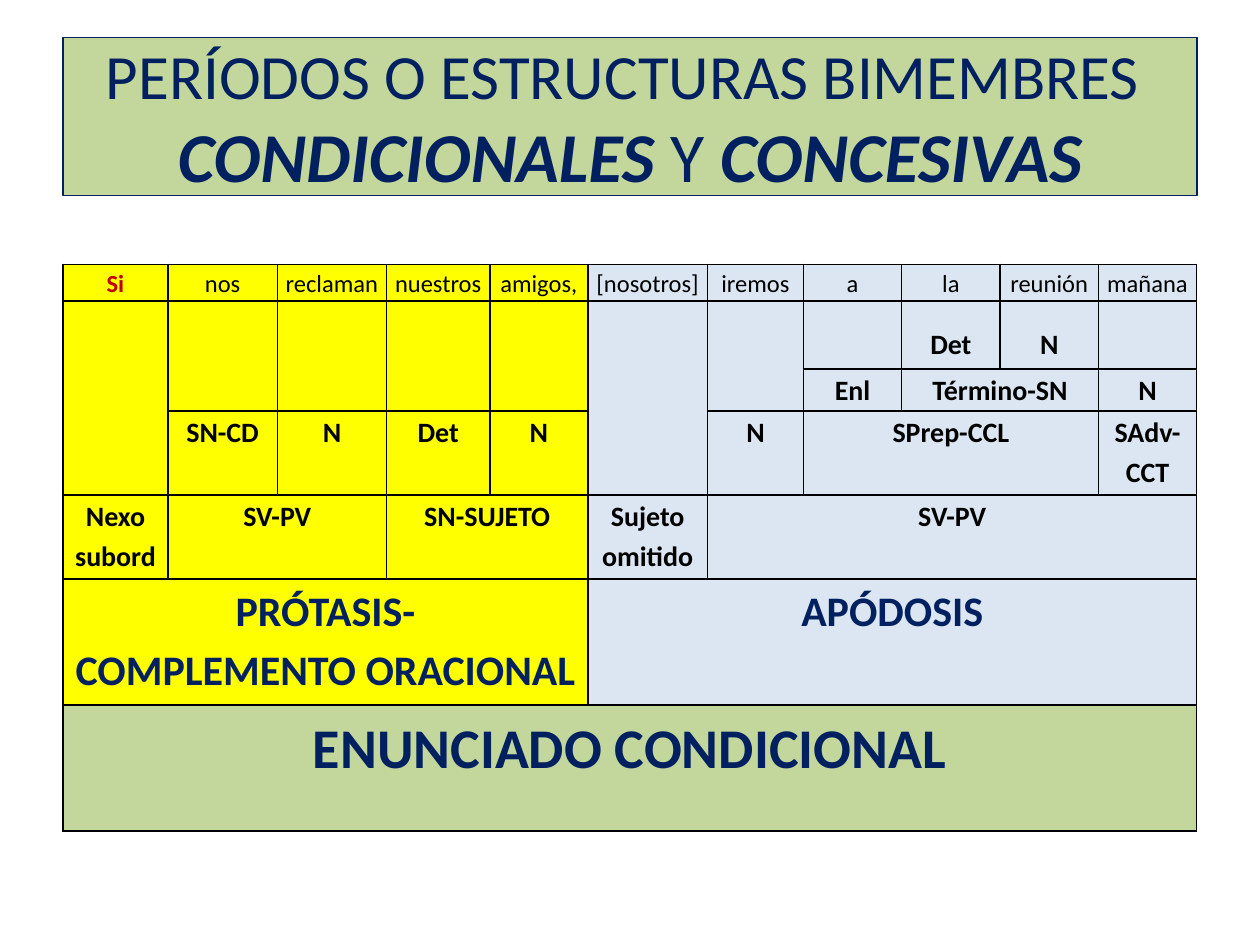
from typing import NamedTuple

from lxml import etree
from pptx import Presentation
from pptx import util as u
from pptx.dml.color import RGBColor
from pptx.enum import shapes, text
from pptx.oxml import ns

COLORS = {
    "yellow": "FFFF00",
    "blue": "DCE6F2",
    "green": "C3D69B",
    "navy": "002060",
    "red": "C00000",
    "black": "000000",
}
FONT = "Calibri"
LEFT, WIDTH = 36, 648
SIDE_MARGIN = 4.5
COLUMN_WIDTHS = [60, 62.5, 62.5, 59, 56, 68.4, 54.8] + [56.2] * 4
ROW_HEIGHTS = [21, 39, 24, 48, 48, 72, 72]
FIRST_APODOSIS_COLUMN = 5
WORDS = ["Si", "nos", "reclaman", "nuestros", "amigos,", "[nosotros]",
         "iremos", "a", "la", "reunión", "mañana"]


class Block(NamedTuple):
    """One analysis cell, possibly spanning several rows or columns."""
    row: int
    column: int
    label: str = ""
    rows: int = 1
    columns: int = 1
    size: int = 16
    bold: bool = True
    color: str = "black"
    fill: str = ""
    top: float = 0


class TitleRun(NamedTuple):
    words: str
    size: int
    strong: bool


BLOCKS = [
    # Sentence, one word per column
    *(Block(0, column, word, size=14, bold=column == 0,
            color="black" if column else "red")
      for column, word in enumerate(WORDS)),
    # Empty cells below the words
    *(Block(1, column, rows=3 if column in (0, 5) else 2) for column in range(7)),
    Block(1, 7),
    Block(1, 8, "Det", top=12.4),
    Block(1, 9, "N", top=12.4),
    Block(1, 10),
    # Constituents
    Block(2, 7, "Enl"),
    Block(2, 8, "Término-SN", columns=2),
    Block(2, 10, "N"),
    Block(3, 1, "SN-CD"),
    Block(3, 2, "N"),
    Block(3, 3, "Det"),
    Block(3, 4, "N"),
    Block(3, 6, "N"),
    Block(3, 7, "SPrep-CCL", columns=3),
    Block(3, 10, "SAdv-CCT"),
    # Functions
    Block(4, 0, "Nexo subord"),
    Block(4, 1, "SV-PV", columns=2),
    Block(4, 3, "SN-SUJETO", columns=2),
    Block(4, 5, "Sujeto omitido"),
    Block(4, 6, "SV-PV", columns=5),
    # Two members and the whole statement
    Block(5, 0, "PRÓTASIS-\nCOMPLEMENTO ORACIONAL", columns=5, size=24, color="navy"),
    Block(5, 5, "APÓDOSIS", columns=6, size=24, color="navy"),
    Block(6, 0, "ENUNCIADO CONDICIONAL", columns=11, size=32, color="navy",
          fill="green"),
]
TITLE = [
    [TitleRun("PERÍODOS O ESTRUCTURAS BIMEMBRES ", 36, False)],
    [TitleRun("CONDICIONALES", 40, True), TitleRun(" Y ", 40, False),
     TitleRun("CONCESIVAS", 40, True)],
]


def rgb(name: str) -> RGBColor:
    return RGBColor.from_string(COLORS[name])


def add_borders(cell, color: str = "black", width: float = 1) -> None:
    properties = cell._tc.get_or_add_tcPr()
    for side in "LRTB":
        line = etree.SubElement(properties, ns.qn(f"a:ln{side}"), w=str(u.Pt(width)))
        fill = etree.SubElement(line, ns.qn("a:solidFill"))
        etree.SubElement(fill, ns.qn("a:srgbClr"), val=COLORS[color])


def draw_title(slide) -> None:
    shape = slide.shapes.add_shape(shapes.MSO_SHAPE.RECTANGLE, u.Pt(LEFT), u.Pt(21.6),
                                   u.Pt(WIDTH), u.Pt(90))
    shape.shadow.inherit = False
    shape.fill.solid()
    shape.fill.fore_color.rgb = rgb("green")
    shape.line.color.rgb = rgb("navy")
    shape.line.width = u.Pt(0.75)
    frame = shape.text_frame
    frame.word_wrap = True
    frame.vertical_anchor = text.MSO_ANCHOR.MIDDLE
    paragraph = frame.paragraphs[0]
    paragraph.alignment = text.PP_ALIGN.CENTER
    for index, line in enumerate(TITLE):
        if index:
            paragraph.add_line_break()
        for part in line:
            run = paragraph.add_run()
            run.text = part.words
            run.font.name = FONT
            run.font.size = u.Pt(part.size)
            run.font.bold = run.font.italic = part.strong
            run.font.color.rgb = rgb("navy")


def draw_block(table, block: Block) -> None:
    side = "yellow" if block.column < FIRST_APODOSIS_COLUMN else "blue"
    for row in range(block.row, block.row + block.rows):
        for column in range(block.column, block.column + block.columns):
            covered = table.cell(row, column)
            covered.margin_left = covered.margin_right = u.Pt(SIDE_MARGIN)
            covered.margin_top, covered.margin_bottom = u.Pt(block.top), 0
            add_borders(covered)
            covered.fill.solid()
            covered.fill.fore_color.rgb = rgb(block.fill or side)

    cell = table.cell(block.row, block.column)
    if block.rows * block.columns > 1:
        cell.merge(table.cell(block.row + block.rows - 1,
                              block.column + block.columns - 1))
    if not block.label:
        return
    cell.text_frame.text = block.label
    for paragraph in cell.text_frame.paragraphs:
        paragraph.alignment = text.PP_ALIGN.CENTER
        paragraph.line_spacing = 1.15
        paragraph.font.name = FONT
        paragraph.font.size = u.Pt(block.size)
        paragraph.font.bold = block.bold
        paragraph.font.color.rgb = rgb(block.color)


def draw_analysis(slide) -> None:
    table = slide.shapes.add_table(
        len(ROW_HEIGHTS), len(COLUMN_WIDTHS), u.Pt(LEFT), u.Pt(151),
        u.Pt(WIDTH), u.Pt(sum(ROW_HEIGHTS))).table
    table.first_row = table.horz_banding = False
    for column, width in zip(table.columns, COLUMN_WIDTHS):
        column.width = u.Pt(width)
    for row, height in zip(table.rows, ROW_HEIGHTS):
        row.height = u.Pt(height)
    for block in BLOCKS:
        draw_block(table, block)


def main() -> None:
    presentation = Presentation()
    presentation.slide_width, presentation.slide_height = u.Pt(720), u.Pt(540)
    slide = presentation.slides.add_slide(presentation.slide_layouts[6])
    draw_analysis(slide)
    draw_title(slide)
    presentation.save("out.pptx")


if __name__ == "__main__":
    main()
